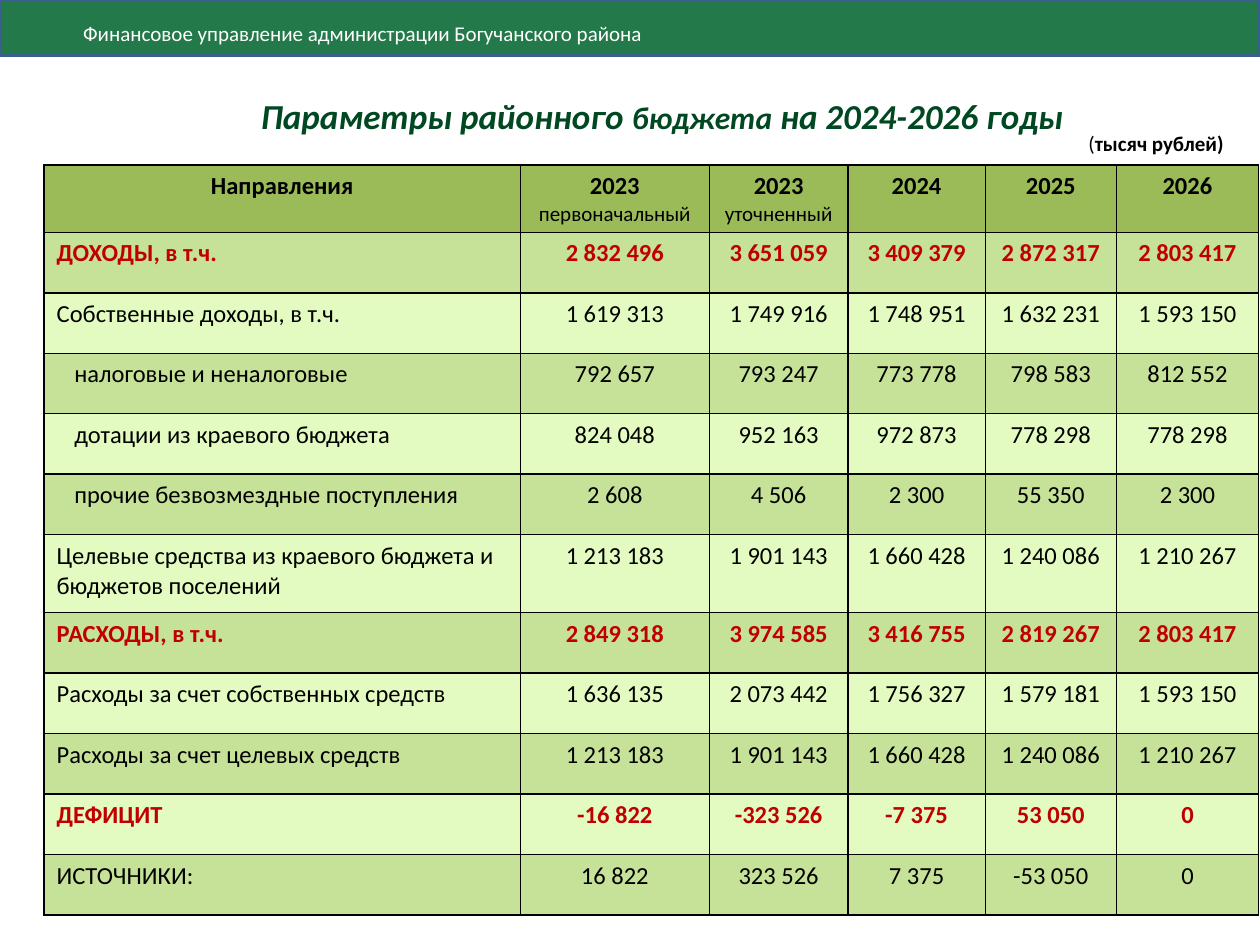
"""Builds the slide with the district budget parameters for 2024-2026."""
from lxml import etree
from pptx import Presentation
from pptx.dml.color import RGBColor
from pptx.enum.shapes import MSO_SHAPE
from pptx.enum.text import MSO_ANCHOR, PP_ALIGN
from pptx.oxml import parse_xml
from pptx.oxml.ns import nsdecls, qn
from pptx.util import Inches, Pt

RECTANGLE = MSO_SHAPE.RECTANGLE
MIDDLE = MSO_ANCHOR.MIDDLE
LEFT, CENTER = PP_ALIGN.LEFT, PP_ALIGN.CENTER

FONT = "Calibri"
COLORS = {
    "banner": "00642D",
    "banner_line": "3A5F8C",
    "white": "FFFFFF",
    "title": "004821",
    "text": "000000",
    "total": "C00000",
    "header": "9BBB59",
    "dark_band": "C6E198",
    "light_band": "E3FBC1",
}
COLUMN_WIDTHS = [3.78, 1.5, 1.1, 1.09, 1.04, 1.13]
ROW_HEIGHT = 0.48
TALL_ROW, TALL_HEIGHT = 6, 0.62
CELL_MARGIN, SUBITEM_MARGIN = 0.1, 0.24

HEADINGS = [
    ("Направления", ""),
    ("2023 ", "первоначальный"),
    ("2023 ", "уточненный"),
    ("2024", ""),
    ("2025", ""),
    ("2026", ""),
]
BUDGET = [
    ("total", "ДОХОДЫ, в т.ч.",
     ["2 832 496", "3 651 059", "3 409 379", "2 872 317", "2 803 417"]),
    ("item", "Собственные доходы, в т.ч.",
     ["1 619 313", "1 749 916", "1 748 951", "1 632 231", "1 593 150"]),
    ("subitem", "налоговые и неналоговые",
     ["792 657", "793 247", "773 778", "798 583", "812 552"]),
    ("subitem", "дотации из краевого бюджета",
     ["824 048", "952 163", "972 873", "778 298", "778 298"]),
    ("subitem", "прочие безвозмездные поступления",
     ["2 608", "4 506", "2 300", "55 350", "2 300"]),
    ("item", "Целевые средства из краевого бюджета и бюджетов поселений",
     ["1 213 183", "1 901 143", "1 660 428", "1 240 086", "1 210 267"]),
    ("total", "РАСХОДЫ, в т.ч.",
     ["2 849 318", "3 974 585", "3 416 755", "2 819 267", "2 803 417"]),
    ("item", "Расходы за счет собственных средств",
     ["1 636 135", "2 073 442", "1 756 327", "1 579 181", "1 593 150"]),
    ("item", "Расходы за счет целевых средств",
     ["1 213 183", "1 901 143", "1 660 428", "1 240 086", "1 210 267"]),
    ("total", "ДЕФИЦИТ",
     ["-16 822", "-323 526", "-7 375", "53 050", "0"]),
    ("item", "ИСТОЧНИКИ:",
     ["16 822", "323 526", "7 375", "-53 050", "0"]),
]


def rgb(name):
    """Return the named palette colour."""
    return RGBColor.from_string(COLORS[name])


def write(frame, pieces, color, align=LEFT, italic=False):
    """Fill the first paragraph with (text, size, bold) pieces."""
    paragraph = frame.paragraphs[0]
    paragraph.alignment = align
    for text, size, bold in pieces:
        run = paragraph.add_run()
        run.text = text
        run.font.name = FONT
        run.font.size = Pt(size)
        run.font.bold = bold
        run.font.italic = italic
        run.font.color.rgb = rgb(color)


def add_banner(slide, text):
    """Draw the translucent band with the department name."""
    banner = slide.shapes.add_shape(RECTANGLE, 0, 0, Inches(10), Inches(0.44))
    banner.shadow.inherit = False
    banner.fill.solid()
    banner.fill.fore_color.rgb = rgb("banner")
    fill_color = banner.fill._xPr.find(qn("a:solidFill"))[0]
    etree.SubElement(fill_color, qn("a:alpha"), val="86000")
    banner.line.color.rgb = rgb("banner_line")
    banner.line.width = Pt(2)
    frame = banner.text_frame
    frame.margin_left = Inches(0.66)
    frame.margin_top, frame.margin_bottom = Inches(0.13), Inches(0.05)
    frame.vertical_anchor = MIDDLE
    write(frame, [(text, 12, False)], "white")


def add_label(slide, left, top, width, height):
    """Add a wrapping text box and return its text frame."""
    label = slide.shapes.add_textbox(
        Inches(left), Inches(top), Inches(width), Inches(height))
    label.text_frame.word_wrap = True
    return label.text_frame


def style_cell(cell, fill):
    """Give a cell its fill and thin black borders."""
    properties = cell._tc.get_or_add_tcPr()
    for side in ("lnL", "lnR", "lnT", "lnB"):
        properties.append(parse_xml(
            f'<a:{side} {nsdecls("a")} w="12700"><a:solidFill>'
            f'<a:srgbClr val="{COLORS["text"]}"/></a:solidFill></a:{side}>'))
    cell.fill.solid()
    cell.fill.fore_color.rgb = rgb(fill)


def add_budget_table(slide):
    """Build the table of income, spending and deficit."""
    row_count = len(BUDGET) + 1
    table = slide.shapes.add_table(
        row_count, len(COLUMN_WIDTHS), Inches(0.35), Inches(1.31),
        Inches(sum(COLUMN_WIDTHS)), Inches(ROW_HEIGHT * row_count)).table
    for column, width in zip(table.columns, COLUMN_WIDTHS):
        column.width = Inches(width)
    for index, row in enumerate(table.rows):
        row.height = Inches(TALL_HEIGHT if index == TALL_ROW else ROW_HEIGHT)

    for cell, (year, version) in zip(table.rows[0].cells, HEADINGS):
        style_cell(cell, "header")
        pieces = [(year, 14, True)]
        if version:
            pieces.append((version, 12, False))
        write(cell.text_frame, pieces, "text", CENTER)

    for index, (kind, name, amounts) in enumerate(BUDGET, start=1):
        band = "dark_band" if index % 2 else "light_band"
        is_total = kind == "total"
        color = "total" if is_total else "text"
        for column, text in enumerate([name, *amounts]):
            cell = table.cell(index, column)
            style_cell(cell, band)
            write(cell.text_frame, [(text, 14, is_total)], color,
                  CENTER if column else LEFT)
        table.cell(index, 0).margin_left = Inches(
            SUBITEM_MARGIN if kind == "subitem" else CELL_MARGIN)


def main():
    """Assemble and save the slide."""
    deck = Presentation()
    deck.slide_width, deck.slide_height = Inches(10), Inches(7.5)
    slide = deck.slides.add_slide(deck.slide_layouts[6])

    add_banner(slide, "Финансовое управление администрации Богучанского района")
    title = add_label(slide, 0.51, 0.68, 9.49, 0.47)
    title.vertical_anchor = MIDDLE
    write(title, [("Параметры районного ", 20, True), ("бюджета", 18, True),
                  (" на 2024-2026 годы", 20, True)], "title", CENTER, italic=True)
    add_budget_table(slide)
    unit = add_label(slide, 8.54, 0.99, 1.46, 0.3)
    write(unit, [("(", 12, False), ("тысяч рублей)", 12, True)], "text")

    deck.save("out.pptx")


if __name__ == "__main__":
    main()
